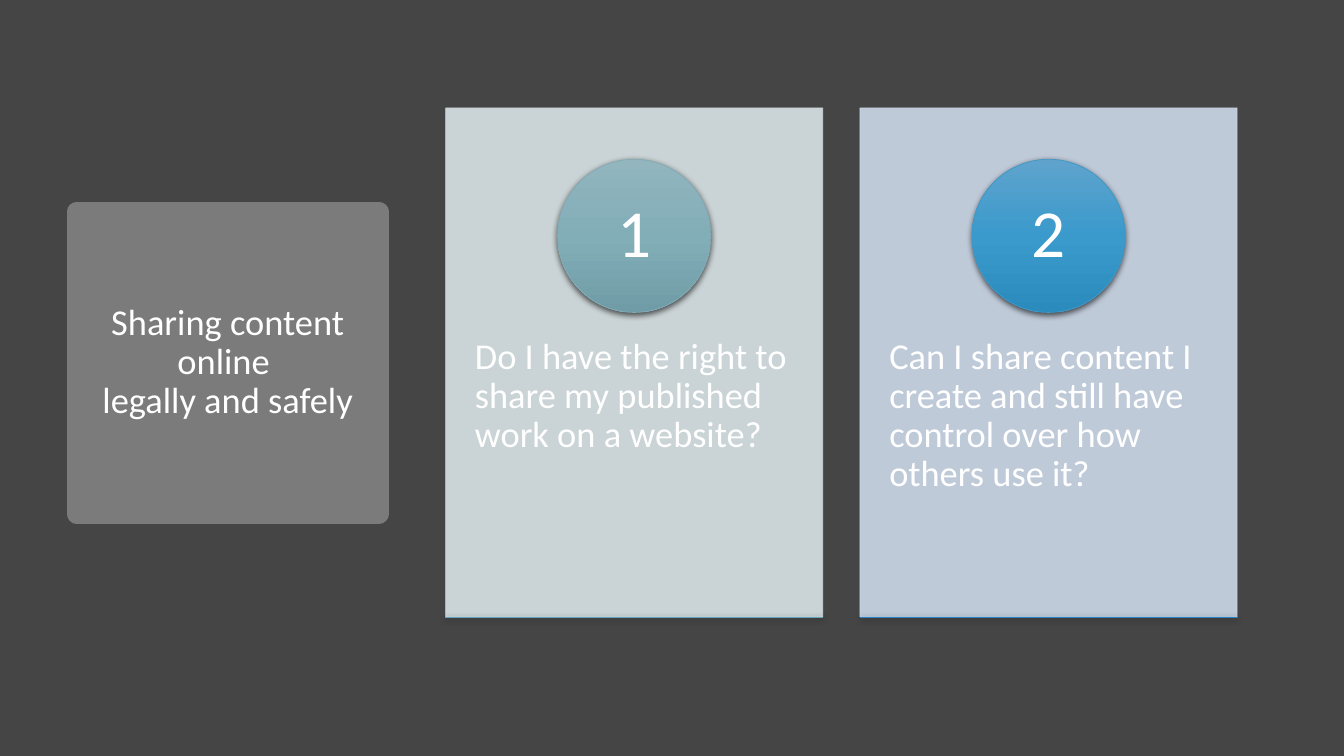
from lxml.etree import SubElement
from pptx import Presentation
from pptx.dml.color import RGBColor
from pptx.enum.shapes import MSO_SHAPE
from pptx.enum.text import MSO_ANCHOR, PP_ALIGN
from pptx.oxml.ns import qn
from pptx.util import Inches, Pt

BACK, GREY, WHITE, BLACK = "454545", "7B7B7B", "FFFFFF", "000000"
TITLE = "Sharing content online \vlegally and safely"
# text, card colour, disc stops, disc line, bar stops, bar line
CARDS = [
    ("Do I have the right to share my published work on a website?",
     "D9E3E5", ("92B5BE", "82AEB8", "709CA7"), "84ACB6",
     ("78AEC4", "60A6C0", "5096B0"), "64A4BC"),
    ("Can I share content I create and still have control over how others use it?",
     "CDD9EA", ("5FA3CD", "3A9ACC", "2C8BBD"), "4098C6",
     ("5191D0", "1E84CE", "1477BE"), "2683C6"),
]
LEFT, TOP, WIDE, HIGH, STEP = 4.42, 1.07, 3.74, 5.05, 4.11
DISC, LABEL = 1.52, 1.07


def paint(color, code):
    color.rgb = RGBColor.from_string(code)


def fade(color):
    """Make a solid fill 90 % opaque."""
    SubElement(color.find(".//" + qn("a:srgbClr")), qn("a:alpha"), val="90000")


def draw(kind, box, edge, width=0.5):
    shape = slide.shapes.add_shape(kind, *map(Inches, box))
    shape.shadow.inherit = False
    shape.line.width = Pt(width)
    paint(shape.line.color, edge)
    return shape


def flat(box, code, width=0.5):
    shape = draw(MSO_SHAPE.RECTANGLE, box, code, width)
    shape.fill.solid()
    paint(shape.fill.fore_color, code)
    return shape


def glossy(kind, box, stops, edge):
    """Draw a shape with a downward gradient and a soft shadow."""
    shape = draw(kind, box, edge)
    shape.fill.gradient()
    shape.fill.gradient_angle = 270
    props = shape._element.spPr
    ramp = props.find(".//" + qn("a:gsLst"))
    ramp.clear()
    for i, code in enumerate(stops):
        stop = SubElement(ramp, qn("a:gs"), pos=str(i * 50000))
        SubElement(stop, qn("a:srgbClr"), val=code)
    glow = SubElement(props.find(qn("a:effectLst")), qn("a:outerShdw"),
                      blurRad=str(Pt(4.5)), dist=str(Pt(1.5)),
                      dir="5400000", rotWithShape="0")
    tone = SubElement(glow, qn("a:srgbClr"), val=BLACK)
    SubElement(tone, qn("a:alpha"), val="63000")


def write(shape, text, size, align, anchor, side, end):
    frame = shape.text_frame
    frame.word_wrap = True
    frame.vertical_anchor = anchor
    frame.margin_left = frame.margin_right = Inches(side)
    frame.margin_top = frame.margin_bottom = Inches(end)
    frame.text = text
    para = frame.paragraphs[0]
    para.alignment, para.line_spacing = align, 0.9
    for run in para.runs:
        run.font.name, run.font.size = "Calibri", Pt(size)
        paint(run.font.color, WHITE)


def label(box, *style):
    write(slide.shapes.add_textbox(*map(Inches, box)), *style)


deck = Presentation()
deck.slide_width, deck.slide_height = Inches(13.33), Inches(7.5)
slide = deck.slides.add_slide(deck.slide_layouts[6])
slide.background.fill.solid()
paint(slide.background.fill.fore_color, BACK)

title = flat((0.76, 2.1, 3, 3), GREY, 13.75)
SubElement(title.line._ln, qn("a:round"))
write(title, TITLE, 26, PP_ALIGN.CENTER, MSO_ANCHOR.MIDDLE, 0.1, 0.05)

for i, (text, code, disc, rim, bar, edge) in enumerate(CARDS):
    x = LEFT + i * STEP
    mid = x + WIDE / 2
    card = flat((x, TOP, WIDE, HIGH), code)
    fade(card._element.spPr.find(qn("a:solidFill")))
    fade(card.line._ln)
    label((x, 2.99, WIDE, 3.03), text, 26,
          PP_ALIGN.LEFT, MSO_ANCHOR.TOP, 0.29, 0.36)
    glossy(MSO_SHAPE.OVAL, (mid - DISC / 2, 1.58, DISC, DISC), disc, rim)
    label((mid - LABEL / 2, 1.8, LABEL, LABEL), str(i + 1), 48,
          PP_ALIGN.CENTER, MSO_ANCHOR.MIDDLE, 0.12, 0.01)
    glossy(MSO_SHAPE.RECTANGLE, (x, TOP + HIGH, WIDE, 0), bar, edge)

deck.save("out.pptx")
